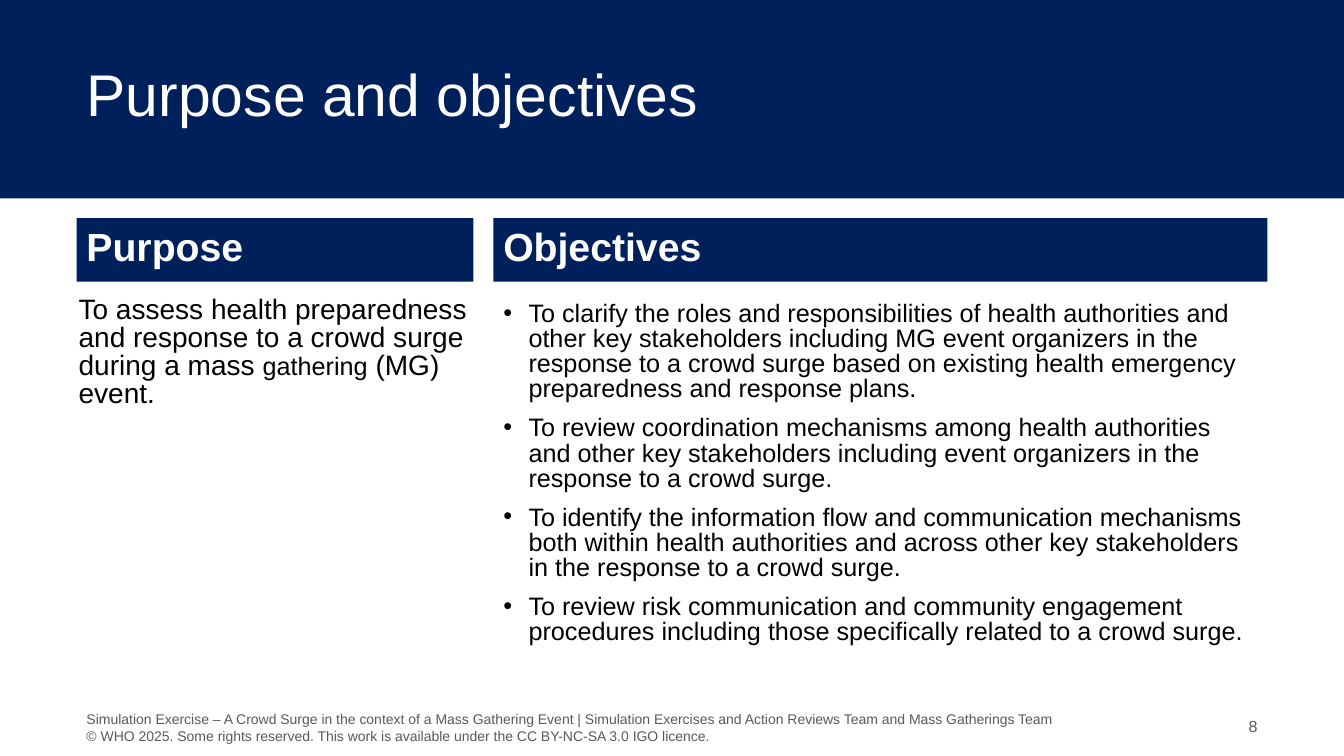
from dataclasses import dataclass

from lxml.etree import SubElement
from pptx import Presentation
from pptx.dml.color import RGBColor
from pptx.enum.shapes import MSO_SHAPE as Preset
from pptx.enum.text import MSO_ANCHOR as Anchor, MSO_AUTO_SIZE as AutoSize, PP_ALIGN as Align
from pptx.oxml.ns import qn
from pptx.util import Cm, Inches, Pt

NAVY, WHITE, BLACK, GREY = "00205C", "FFFFFF", "000000", "595959"
FONT = "Arial"
MODULE = Cm(0.5)
LEFT_MARGIN = Inches(0.76)
TIGHT = 0.83
HANGING = Inches(0.25)


@dataclass(frozen=True)
class Area:
    col: float
    row: float
    cols: float
    rows: float


@dataclass(frozen=True)
class Section:
    heading: str
    col: int
    cols: int
    paragraphs: list
    size: float
    bulleted: bool
    insets: tuple


def color(hex_code: str) -> RGBColor:
    return RGBColor.from_string(hex_code)


def frame(area: Area) -> tuple:
    return (LEFT_MARGIN + int(area.col * MODULE), int(area.row * MODULE),
            int(area.cols * MODULE), int(area.rows * MODULE))


def add_bullet(paragraph) -> None:
    properties = paragraph._p.get_or_add_pPr()
    properties.set("marL", str(HANGING))
    properties.set("indent", str(-HANGING))
    SubElement(properties, qn("a:buFont")).set("typeface", FONT)
    SubElement(properties, qn("a:buChar")).set("char", "•")


def write(holder, paragraphs: list, *, size: float, ink: str, bold: bool = False,
          align=Align.LEFT, anchor=Anchor.TOP, spacing: float = 1.0,
          gap: float = 0, bulleted: bool = False, insets: tuple = (0.1, 0.05)) -> None:
    text = holder.text_frame
    text.word_wrap = True
    text.auto_size = AutoSize.NONE
    text.vertical_anchor = anchor
    text.margin_left = text.margin_right = Inches(insets[0])
    text.margin_top = text.margin_bottom = Inches(insets[1])
    for index, runs in enumerate(paragraphs):
        paragraph = text.add_paragraph() if index else text.paragraphs[0]
        paragraph.alignment = align
        paragraph.line_spacing = spacing
        paragraph.space_before = Pt(gap if index else 0)
        if bulleted:
            add_bullet(paragraph)
        for content, run_size in [(runs, size)] if isinstance(runs, str) else runs:
            for line_index, line in enumerate(content.split("\n")):
                if line_index:
                    paragraph.add_line_break()
                run = paragraph.add_run()
                run.text = line
                run.font.name = FONT
                run.font.size = Pt(run_size)
                run.font.bold = bold
                run.font.color.rgb = color(ink)


def add_panel(slide, position: tuple):
    panel = slide.shapes.add_shape(Preset.RECTANGLE, *position)
    panel.shadow.inherit = False
    panel.fill.solid()
    panel.fill.fore_color.rgb = color(NAVY)
    panel.line.fill.background()
    return panel


def add_text(slide, area: Area, paragraphs: list, **format_options) -> None:
    write(slide.shapes.add_textbox(*frame(area)), paragraphs, **format_options)


def add_section(slide, section: Section) -> None:
    heading = add_panel(slide, frame(Area(section.col, 11, section.cols, 3.2)))
    write(heading, [section.heading], size=28, ink=WHITE, bold=True,
          anchor=Anchor.MIDDLE, spacing=TIGHT)
    add_text(slide, Area(section.col, 15, section.cols, 20), section.paragraphs,
             size=section.size, ink=BLACK, spacing=TIGHT, gap=10,
             bulleted=section.bulleted, insets=section.insets)


SECTIONS = [
    Section("Purpose", 0, 20, [[
        ("To assess health preparedness and response to a crowd surge during a mass ", 20),
        ("gathering", 18),
        (" (MG) event.", 20),
    ]], 20, False, (0.02, 0)),
    Section("Objectives", 21, 39, [
        "To clarify the roles and responsibilities of health authorities and other key "
        "stakeholders including MG event organizers in the response to a crowd surge based "
        "on existing health emergency preparedness and response plans.",
        "To review coordination mechanisms among health authorities and other key stakeholders "
        "including event organizers in the response to a crowd surge.",
        "To identify the information flow and communication mechanisms both within health "
        "authorities and across other key stakeholders in the response to a crowd surge.",
        "To review risk communication and community engagement procedures including those "
        "specifically related to a crowd surge.",
    ], 18, True, (0.1, 0.05)),
]
FOOTER = (
    "Simulation Exercise – A Crowd Surge in the context of a Mass Gathering Event | "
    "Simulation Exercises and Action Reviews Team and Mass Gatherings Team\n"
    "© WHO 2025. Some rights reserved. This work is available under the "
    "CC BY-NC-SA 3.0 IGO licence."
)


def main() -> None:
    deck = Presentation()
    deck.slide_width, deck.slide_height = Inches(13.33), Inches(7.5)
    slide = deck.slides.add_slide(deck.slide_layouts[5])

    title = slide.shapes.title
    title.left, title.top, title.width, title.height = frame(Area(0, 2, 50, 6))
    write(title, ["Purpose and objectives"], size=42, ink=WHITE,
          anchor=Anchor.MIDDLE, spacing=TIGHT, insets=(0.1, 0))
    band = add_panel(slide, (0, 0, deck.slide_width, 10 * MODULE))
    title.element.addprevious(band.element)

    for section in SECTIONS:
        add_section(slide, section)

    add_text(slide, Area(0, 35.75, 55, 1.8), [FOOTER], size=10, ink=GREY,
             anchor=Anchor.MIDDLE)
    add_text(slide, Area(55, 35.7, 5, 1.8), ["8"], size=11.5, ink=GREY,
             align=Align.RIGHT, anchor=Anchor.MIDDLE)
    deck.save("out.pptx")


if __name__ == "__main__":
    main()
